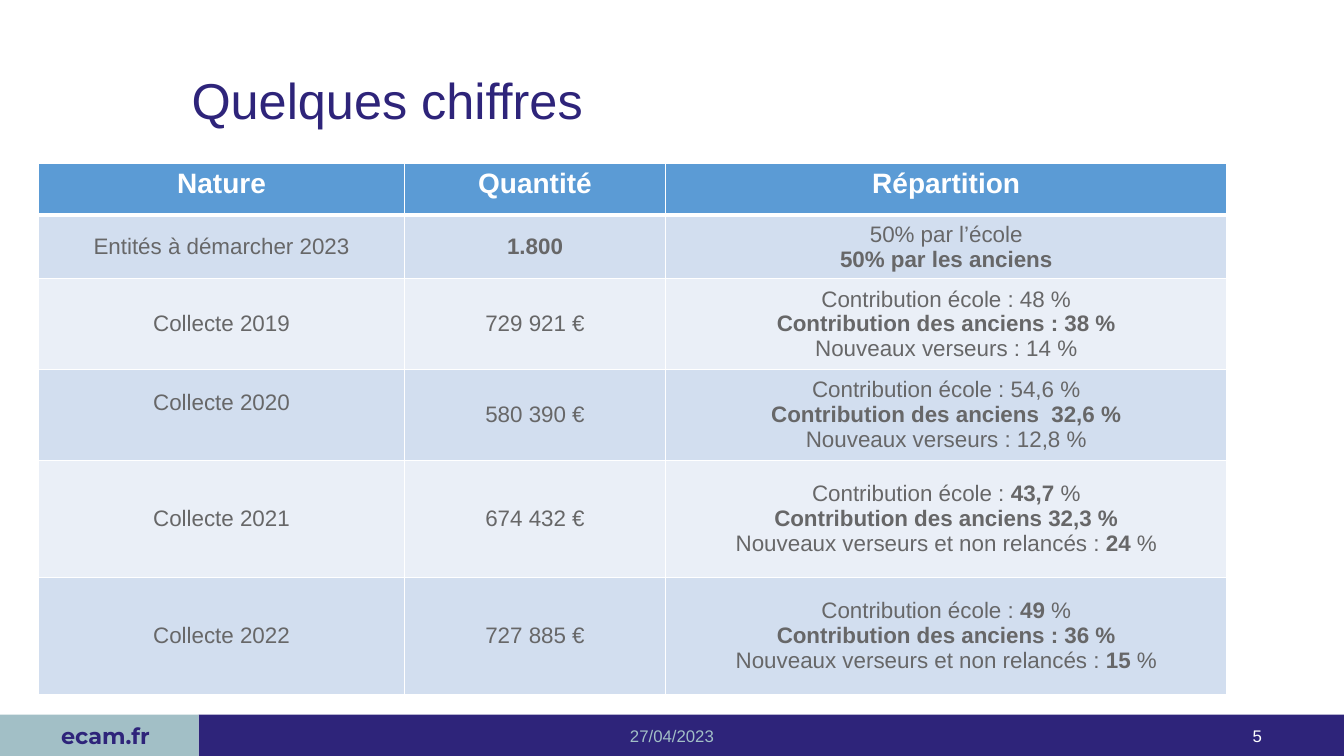
from dataclasses import dataclass
from itertools import product

from pptx import Presentation
from pptx.dml.color import RGBColor
from pptx.enum.shapes import MSO_SHAPE
from pptx.enum.text import MSO_ANCHOR, PP_ALIGN
from pptx.oxml import parse_xml
from pptx.oxml.ns import nsdecls
from pptx.slide import Slide
from pptx.util import Inches, Pt

NAVY = RGBColor(0x2E, 0x24, 0x7A)
SAGE = RGBColor(0xA2, 0xBF, 0xC6)
WHITE = RGBColor(0xFF, 0xFF, 0xFF)
GREY = RGBColor(0x67, 0x67, 0x68)
HEADER = RGBColor(0x5B, 0x9B, 0xD5)
BANDS = RGBColor(0xEA, 0xEF, 0xF7), RGBColor(0xD2, 0xDE, 0xEF)

COLUMNS, ROWS = 80, 45
FOOTER_TOP = 42.54
FOOTER_HEIGHT = ROWS - FOOTER_TOP
TAB_WIDTH = 11.82

TABLE_COLUMNS = [21.78, 15.54, 33.42]
TABLE_ROWS = [3.1, 3.76, 5.39, 5.39, 6.96, 6.96]
FIGURES = [
    ["Nature", "Quantité", "Répartition"],
    ["Entités à démarcher 2023", "*1.800*",
     "50% par l’école\n*50% par les anciens*"],
    ["Collecte 2019", "729 921 €",
     "Contribution école : 48 %\n*Contribution des anciens : 38 %*\n"
     "Nouveaux verseurs : 14 %"],
    ["Collecte 2020", "580 390 €",
     "Contribution école : 54,6 %\n*Contribution des anciens  32,6 %*\n"
     "Nouveaux verseurs : 12,8 %"],
    ["Collecte 2021", "674 432 €",
     "Contribution école : *43,7* %\n*Contribution des anciens 32,3 %*\n"
     "Nouveaux verseurs et non relancés : *24* %"],
    ["Collecte 2022", "727 885 €",
     "Contribution école : *49* %\n*Contribution des anciens : 36 %*\n"
     "Nouveaux verseurs et non relancés : *15* %"],
]


@dataclass
class Deck:
    prs: Presentation
    s: Slide
    font: str = "Arial"

    def x(self, columns):
        return round(self.prs.slide_width * columns / COLUMNS)

    def y(self, rows):
        return round(self.prs.slide_height * rows / ROWS)

    def box(self, left, top, width, height):
        return self.x(left), self.y(top), self.x(width), self.y(height)

    def lines(self, tf, text, size, color, align=PP_ALIGN.CENTER, font=None, bold=None):
        tf.word_wrap = True
        for i, line in enumerate(text.split("\n")):
            p = tf.add_paragraph() if i else tf.paragraphs[0]
            p.alignment = align
            p.font.name = font or self.font
            p.font.size = Pt(size)
            p.font.color.rgb = color
            p.font.bold = bold
            for j, part in enumerate(line.split("*")):
                if part:
                    r = p.add_run()
                    r.text = part
                    if j % 2:
                        r.font.bold = True

    def title(self, text, *place):
        sp = self.s.shapes.title
        sp.left, sp.top, sp.width, sp.height = self.box(*place)
        tf = sp.text_frame
        tf.vertical_anchor = MSO_ANCHOR.MIDDLE
        self.lines(tf, text, 36, NAVY, PP_ALIGN.LEFT)
        tf.paragraphs[0].line_spacing = 0.9

    def band(self, color, *place):
        sp = self.s.shapes.add_shape(MSO_SHAPE.RECTANGLE, *self.box(*place))
        sp.shadow.inherit = False
        sp.fill.solid()
        sp.fill.fore_color.rgb = color
        sp.line.fill.background()
        sp.text_frame.vertical_anchor = MSO_ANCHOR.MIDDLE
        return sp

    def text(self, text, color, align, *place):
        tf = self.s.shapes.add_textbox(*self.box(*place)).text_frame
        tf.vertical_anchor = MSO_ANCHOR.MIDDLE
        self.lines(tf, text, 12, color, align)

    def borders(self, cell, bottom, top):
        for side, width in zip("LRTB", (1, 1, top, bottom)):
            cell._tc.get_or_add_tcPr().append(parse_xml(
                f'<a:ln{side} {nsdecls("a")} w="{Pt(width)}"><a:solidFill>'
                f'<a:srgbClr val="{WHITE}"/></a:solidFill></a:ln{side}>'))

    def table(self, data, widths, heights, left, top):
        place = self.box(left, top, sum(widths), sum(heights))
        table = self.s.shapes.add_table(len(heights), len(widths), *place).table
        for column, width in zip(table.columns, widths):
            column.width = self.x(width)
        for row, height in zip(table.rows, heights):
            row.height = self.y(height)
        for i, j in product(range(len(heights)), range(len(widths))):
            cell = table.cell(i, j)
            self.borders(cell, 1 if i else 3, 3 if i == 1 else 1)
            cell.fill.solid()
            cell.fill.fore_color.rgb = BANDS[i % 2] if i else HEADER
            if i:
                cell.vertical_anchor = MSO_ANCHOR.MIDDLE
                self.lines(cell.text_frame, data[i][j], 16, GREY)
            else:
                self.lines(cell.text_frame, data[i][j], 20, WHITE, bold=True)
        return table


def main():
    prs = Presentation()
    prs.slide_width, prs.slide_height = Inches(13.33), Inches(7.5)
    deck = Deck(prs, prs.slides.add_slide(prs.slide_layouts[5]))

    deck.band(NAVY, TAB_WIDTH, FOOTER_TOP, COLUMNS - TAB_WIDTH, FOOTER_HEIGHT)
    tf = deck.band(SAGE, 0, FOOTER_TOP, TAB_WIDTH, FOOTER_HEIGHT).text_frame
    tf.margin_left = Inches(0.22)
    deck.lines(tf, "ecam.fr", 16, NAVY, font="Montserrat", bold=True)

    deck.title("Quelques chiffres", 10.8, 1.8, 64.4, 8.7)
    deck.text("27/04/2023", SAGE, PP_ALIGN.CENTER, 26.5, 42.6, 27, 2.4)
    deck.text("5", WHITE, PP_ALIGN.RIGHT, 57.7, 42.6, 18, 2.4)

    table = deck.table(FIGURES, TABLE_COLUMNS, TABLE_ROWS, 2.3, 9.7)
    table.cell(3, 0).margin_bottom = Inches(0.3)

    prs.save("out.pptx")


if __name__ == "__main__":
    main()
